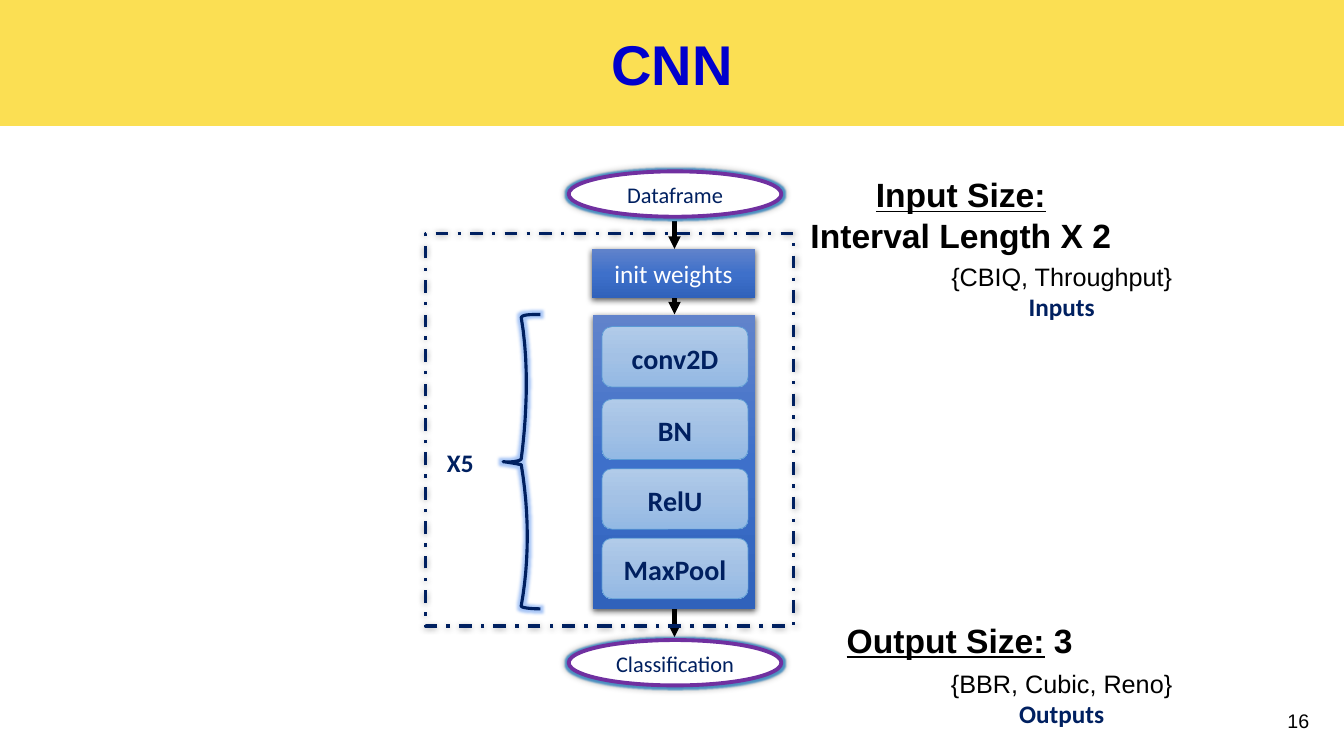
from dataclasses import dataclass

from pptx import Presentation
from pptx.dml.color import RGBColor
from pptx.enum.dml import MSO_LINE
from pptx.enum.shapes import MSO_CONNECTOR, MSO_SHAPE
from pptx.enum.text import MSO_ANCHOR, PP_ALIGN
from pptx.oxml import parse_xml
from pptx.oxml.ns import nsdecls, qn
from pptx.util import Inches, Pt


@dataclass(frozen=True)
class Theme:
    """Colours, fonts and type sizes of the slide."""
    banner: str = "FBDF53"
    title: str = "0000CC"
    navy: str = "002060"
    black: str = "000000"
    white: str = "FFFFFF"
    purple: str = "7030A0"
    layer_edge: str = "5B9BD5"
    oval_glow: str = "0070C0"
    brace_glow: str = "6FA0F0"
    deep_blue: tuple = ("6183CB", "3E70CA", "3062BB")
    pale_blue: tuple = ("B1CBE9", "A3C1E5", "93B9E4")
    heading_font: str = "Arial"
    diagram_font: str = "Calibri"
    title_size: int = 40
    heading_size: int = 24
    layer_size: int = 20
    body_size: int = 18
    oval_size: int = 16
    number_size: int = 14


@dataclass(frozen=True)
class Box:
    """A rectangle in inches."""
    left: float
    top: float
    width: float
    height: float

    def inside(self, dx, dy, width, height):
        """Return a box offset from this box's corner."""
        return Box(self.left + dx, self.top + dy, width, height)

    def emu(self):
        """Return the four lengths for python-pptx."""
        return [Inches(n) for n in (self.left, self.top, self.width, self.height)]


THEME = Theme()


def style(run, size, color, font, bold=False, underline=False):
    """Format one run."""
    run.font.size, run.font.name = Pt(size), font
    run.font.bold, run.font.underline = bold, underline
    run.font.color.rgb = RGBColor.from_string(color)


def add_effects(shape, glow=None, shadow=None):
    """Give a shape only the glow and shadow asked for."""
    shape.shadow.inherit = False
    effects = shape._element.spPr.find(qn("a:effectLst"))
    if glow:
        color, radius = glow
        effects.append(parse_xml(
            f'<a:glow {nsdecls("a")} rad="{Pt(radius)}"><a:srgbClr val="{color}">'
            '<a:alpha val="60000"/></a:srgbClr></a:glow>'))
    if shadow:
        opacity, blur, distance = shadow
        effects.append(parse_xml(
            f'<a:outerShdw {nsdecls("a")} blurRad="{Pt(blur)}" dist="{Pt(distance)}" '
            f'dir="5400000" rotWithShape="0"><a:srgbClr val="{THEME.black}">'
            f'<a:alpha val="{opacity * 1000}"/></a:srgbClr></a:outerShdw>'))


def add_panel(slide, kind, box, fill=None, line=None, glow=None, shadow=None):
    """Add a preset shape with a solid, graded or absent fill."""
    panel = slide.shapes.add_shape(kind, *box.emu())
    if isinstance(fill, tuple):
        stops = "".join(f'<a:gs pos="{i * 50000}"><a:srgbClr val="{color}"/></a:gs>'
                        for i, color in enumerate(fill))
        panel._element.spPr.find(qn("a:prstGeom")).addnext(parse_xml(
            f'<a:gradFill {nsdecls("a")}><a:gsLst>{stops}</a:gsLst>'
            '<a:lin ang="5400000" scaled="0"/></a:gradFill>'))
    elif fill:
        panel.fill.solid()
        panel.fill.fore_color.rgb = RGBColor.from_string(fill)
    else:
        panel.fill.background()
    if line:
        color, width = line
        panel.line.color.rgb = RGBColor.from_string(color)
        panel.line.width = Pt(width)
    else:
        panel.line.fill.background()
    add_effects(panel, glow, shadow)
    return panel


def add_label(panel, text, size, color, font=THEME.diagram_font, bold=False, spaced=False):
    """Centre one line of text in a shape."""
    panel.text_frame.text = text
    panel.text_frame.vertical_anchor = MSO_ANCHOR.MIDDLE
    paragraph = panel.text_frame.paragraphs[0]
    paragraph.alignment = PP_ALIGN.CENTER
    if spaced:
        paragraph.line_spacing, paragraph.space_after = 1.07, Pt(8)
    style(paragraph.runs[0], size, color, font, bold)


def add_text(slide, box, text, wrap=True, align=PP_ALIGN.CENTER):
    """Add a text box and return its paragraphs."""
    frame = slide.shapes.add_textbox(*box.emu()).text_frame
    frame.word_wrap = wrap
    frame.text = text
    for paragraph in frame.paragraphs:
        paragraph.alignment = align
    return frame.paragraphs


def add_arrow(slide, x, start, end):
    """Draw a downward arrow."""
    arrow = slide.shapes.add_connector(
        MSO_CONNECTOR.STRAIGHT, Inches(x), Inches(start), Inches(x), Inches(end))
    arrow.line.color.rgb = RGBColor.from_string(THEME.black)
    arrow.line.width = Pt(3)
    arrow.line._get_or_add_ln().append(parse_xml(f'<a:tailEnd {nsdecls("a")} type="triangle"/>'))
    arrow._element.spPr.append(parse_xml(f'<a:effectLst {nsdecls("a")}/>'))


def add_brace(slide, box):
    """Draw the bowed brace from its lower tip to its upper tip."""
    curves = [((.37, 2.92), (.27, 2.92), (.18, 2.91), (.18, 2.89)),
              ((.18, 2.89), (.26, 2.45), (.26, 1.96), (.18, 1.49)),
              ((.18, 1.49), (.18, 1.49), (.08, 1.47), (0, 1.46)),
              ((0, 1.46), (.1, 1.47), (.18, 1.45), (.18, 1.43)),
              ((.18, 1.43), (.22, 1.13), (.27, .55), (.18, .03)),
              ((.18, .03), (.19, 0), (.27, 0), (.37, 0))]
    points = []
    for curve in curves:
        for step in range(1, 13):
            t = step / 12
            weights = ((1 - t) ** 3, 3 * t * (1 - t) ** 2, 3 * t * t * (1 - t), t ** 3)
            dx, dy = (sum(w * p[axis] for w, p in zip(weights, curve)) for axis in (0, 1))
            points.append((Inches(box.left + dx), Inches(box.top + dy)))
    builder = slide.shapes.build_freeform(
        Inches(box.left + box.width), Inches(box.top + box.height))
    builder.add_line_segments(points, close=False)
    brace = builder.convert_to_shape()
    brace.fill.background()
    brace.line.color.rgb = RGBColor.from_string(THEME.navy)
    brace.line.width = Pt(2.25)
    add_effects(brace, glow=(THEME.brace_glow, 4))


def draw_banner(slide, box, title):
    """Draw the title band."""
    banner = add_panel(slide, MSO_SHAPE.RECTANGLE, box, THEME.banner)
    add_label(banner, title, THEME.title_size, THEME.title, THEME.heading_font, bold=True)


def draw_network(slide, box):
    """Draw the repeated layers between input and output."""
    repeat = add_text(slide, box.inside(0, 2.69, .69, .34), "X5")[0]
    style(repeat.runs[0], THEME.body_size, THEME.navy, THEME.diagram_font, True)
    add_brace(slide, box.inside(.77, 1.42, .37, 2.92))
    stack = box.inside(1.66, 1.42, 1.61, 2.92)
    add_panel(slide, MSO_SHAPE.RECTANGLE, stack, THEME.deep_blue, shadow=(63, 4.5, 1.5))
    for layer, dy in {"conv2D": .12, "BN": .84, "RelU": 1.53, "MaxPool": 2.22}.items():
        block = add_panel(slide, MSO_SHAPE.ROUNDED_RECTANGLE, stack.inside(.09, dy, 1.45, .6),
                          THEME.pale_blue, (THEME.layer_edge, .5))
        add_label(block, layer, THEME.layer_size, THEME.navy, bold=True, spaced=True)
    weights = add_panel(slide, MSO_SHAPE.RECTANGLE, box.inside(1.65, .77, 1.62, .49),
                        THEME.deep_blue, shadow=(63, 4.5, 1.5))
    add_label(weights, "init weights", THEME.body_size, THEME.white)
    for start, end in ((.49, .77), (1.26, 1.42), (4.34, 4.62)):
        add_arrow(slide, box.left + 2.47, box.top + start, box.top + end)
    for name, dy in (("Dataframe", 0), ("Classification", 4.65)):
        oval = add_panel(slide, MSO_SHAPE.OVAL, box.inside(1.42, dy, 2.11, .45), THEME.white,
                         (THEME.purple, 2.75), (THEME.oval_glow, 2), (40, 5, 0))
        add_label(oval, name, THEME.oval_size, THEME.navy, spaced=True)
    frame = add_panel(slide, MSO_SHAPE.RECTANGLE, box.inside(0, .62, 3.65, 3.89),
                      line=(THEME.navy, 2.25), shadow=(40, 5, 0))
    frame.line.dash_style = MSO_LINE.DASH_DOT


def draw_sizes(slide, box):
    """Write the input and output sizes beside the network."""
    heading = (THEME.heading_size, THEME.black, THEME.heading_font, True)
    label, value = add_text(slide, box.inside(0, 0, 3.3, .91),
                            "Input Size:\nInterval Length X 2", wrap=False)
    style(label.runs[0], *heading, underline=True)
    style(value.runs[0], *heading)
    output = add_text(slide, box.inside(.42, 4.42, 2.46, .5), "Output Size:", False, PP_ALIGN.LEFT)[0]
    style(output.runs[0], *heading, underline=True)
    count = output.add_run()
    count.text = " 3"
    style(count, *heading)
    for place, text in ((box.inside(1.19, .86, 2.92, .71), "{CBIQ, Throughput}\nInputs"),
                        (box.inside(1, 4.9, 3.3, .71), "{BBR, Cubic, Reno}\nOutputs")):
        members, role = add_text(slide, place, text)
        style(members.runs[0], THEME.body_size, THEME.black, THEME.heading_font)
        style(role.runs[0], THEME.body_size, THEME.navy, THEME.diagram_font, True)


def main():
    """Build and save the slide."""
    deck = Presentation()
    deck.slide_width, deck.slide_height = Inches(13.33), Inches(7.5)
    slide = deck.slides.add_slide(deck.slide_layouts[6])
    number = add_text(slide, Box(12.67, 6.98, .67, .52), "16", align=PP_ALIGN.LEFT)[0]
    style(number.runs[0], THEME.number_size, THEME.black, THEME.heading_font)
    draw_banner(slide, Box(0, 0, 13.33, 1.25), "CNN")
    draw_network(slide, Box(4.22, 1.7, 3.65, 5.1))
    draw_sizes(slide, Box(7.88, 1.68, 4.3, 5.61))
    deck.save("out.pptx")


if __name__ == "__main__":
    main()
